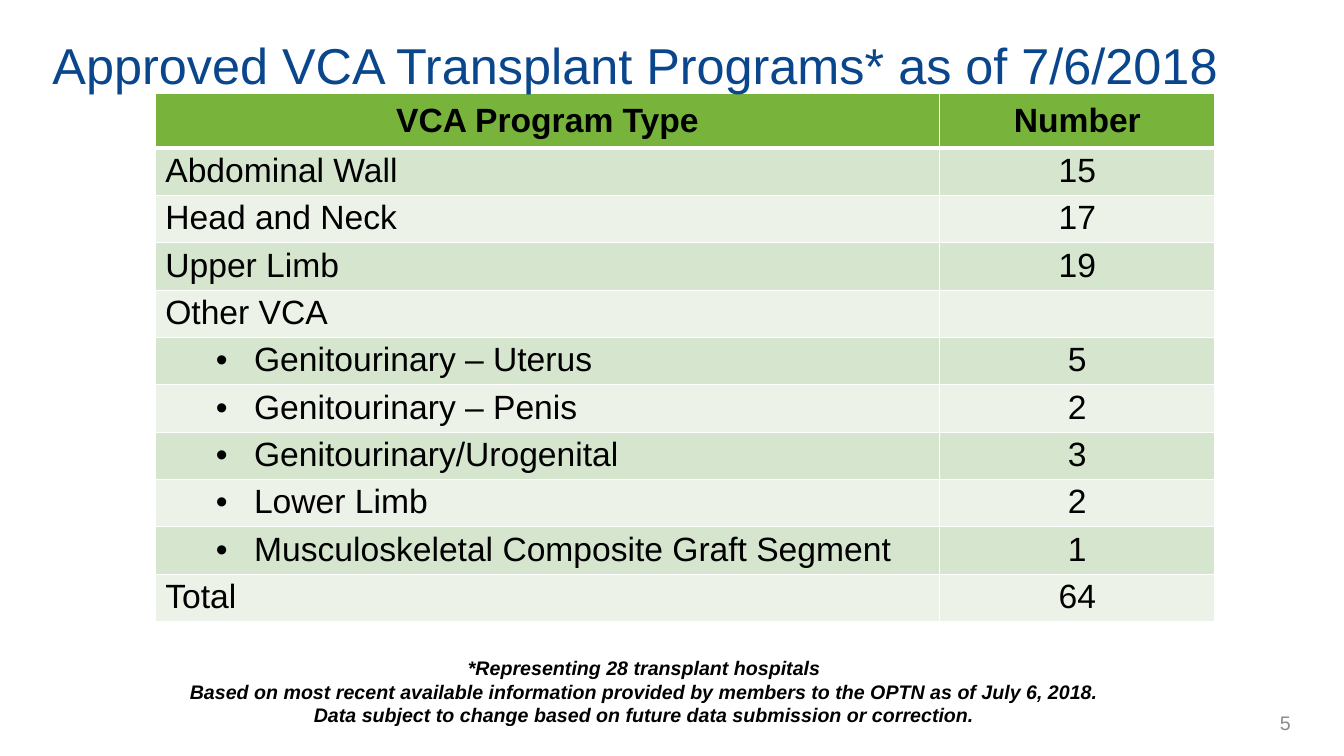
from lxml import etree
from pptx import Presentation
from pptx.dml.color import RGBColor
from pptx.enum import text as t
from pptx.oxml import ns
from pptx.util import Inches, Pt

# Content
TITLE = "Approved VCA Transplant Programs* as of 7/6/2018"
HEAD = ("VCA Program Type", "Number")
ROWS = [  # level, program, number
    (0, "Abdominal Wall", "15"),
    (0, "Head and Neck", "17"),
    (0, "Upper Limb", "19"),
    (0, "Other VCA", ""),
    (1, "Genitourinary – Uterus", "5"),
    (1, "Genitourinary – Penis", "2"),
    (1, "Genitourinary/Urogenital", "3"),
    (1, "Lower Limb", "2"),
    (1, "Musculoskeletal Composite Graft Segment", "1"),
    (0, "Total", "64"),
]
NOTES = [
    "*Representing 28 transplant hospitals",
    "Based on most recent available information provided by members "
    "to the OPTN as of July 6, 2018.",
    "Data subject to change based on future data submission or correction.",
]
PAGE = "5"

# Style and grid
HEX = {"title": "0A468C", "text": "000000", "page": "8C8C8C", "line": "FFFFFF",
       "head": "78B43C", "dark": "D6E5CE", "light": "ECF2E8"}
COLS = (7.78, 2.73)
TOP, LEFT = 0.93, 1.54
HEAD_H, ROW_H = 0.54, 0.47
LEFT_AL, MID, RIGHT = t.PP_ALIGN.LEFT, t.PP_ALIGN.CENTER, t.PP_ALIGN.RIGHT


def style(frame, size, color, align, bold=False, italic=False):
    for para in frame.paragraphs:
        para.alignment = align
        for run in para.runs:
            font = run.font
            font.name, font.size = "Arial", Pt(size)
            font.bold, font.italic = bold, italic
            font.color.rgb = RGBColor.from_string(HEX[color])


def edge(cell, bottom):
    props = cell._tc.get_or_add_tcPr()
    for side, width in (("L", 1), ("R", 1), ("T", 1), ("B", bottom)):
        line = etree.SubElement(props, ns.qn("a:ln" + side), w=str(Pt(width)))
        fill = etree.SubElement(line, ns.qn("a:solidFill"))
        etree.SubElement(fill, ns.qn("a:srgbClr"), val=HEX["line"])


def bullet(para):
    props = para._p.get_or_add_pPr()
    props.set("marL", str(Inches(0.88)))
    props.set("indent", str(Inches(-0.38)))
    props.set("lvl", "1")
    etree.SubElement(props, ns.qn("a:buFont"), typeface="Arial")
    etree.SubElement(props, ns.qn("a:buChar"), char="•")


def put(cell, words, fill, align, head=False):
    edge(cell, 3 if head else 1)
    cell.fill.solid()
    cell.fill.fore_color.rgb = RGBColor.from_string(HEX[fill])
    cell.margin_top = cell.margin_bottom = Inches(0.04)
    if head:
        cell.vertical_anchor = t.MSO_ANCHOR.MIDDLE
    cell.text_frame.text = words
    style(cell.text_frame, 24, "text", align, bold=head)


def label(slide, box, words):
    frame = slide.shapes.add_textbox(*map(Inches, box)).text_frame
    frame.word_wrap = True
    frame.text = words
    return frame


def main():
    deck = Presentation()
    deck.slide_width, deck.slide_height = Inches(13.33), Inches(7.5)
    slide = deck.slides.add_slide(deck.slide_layouts[5])

    # Title
    title = slide.shapes.title
    title.left, title.top, title.width, title.height = map(
        Inches, (0.42, 0.17, 12.75, 0.93))
    frame = title.text_frame
    frame.text = TITLE
    frame.auto_size = t.MSO_AUTO_SIZE.NONE
    frame.vertical_anchor = t.MSO_ANCHOR.MIDDLE
    style(frame, 36, "title", LEFT_AL)

    # Program table, placed behind the title
    high = HEAD_H + ROW_H * len(ROWS)
    holder = slide.shapes.add_table(
        len(ROWS) + 1, len(COLS),
        *map(Inches, (LEFT, TOP, sum(COLS), high)))
    slide.shapes._spTree.insert(2, holder._element)
    table = holder.table
    for col, width in zip(table.columns, COLS):
        col.width = Inches(width)
    for i, row in enumerate(table.rows):
        row.height = Inches(ROW_H if i else HEAD_H)
    for j, words in enumerate(HEAD):
        put(table.cell(0, j), words, "head", MID, head=True)
    for i, (level, name, count) in enumerate(ROWS, 1):
        fill = "dark" if i % 2 else "light"
        put(table.cell(i, 0), name, fill, LEFT_AL)
        put(table.cell(i, 1), count, fill, MID)
        if level:
            bullet(table.cell(i, 0).text_frame.paragraphs[0])

    # Page number and notes
    frame = label(slide, (10.64, 6.97, 2.26, 0.4), PAGE)
    frame.vertical_anchor = t.MSO_ANCHOR.MIDDLE
    style(frame, 14, "page", RIGHT)
    frame = label(slide, (0, 6.46, 12.78, 0.81), "\n".join(NOTES))
    style(frame, 14, "text", MID, bold=True, italic=True)

    deck.save("out.pptx")


if __name__ == "__main__":
    main()
